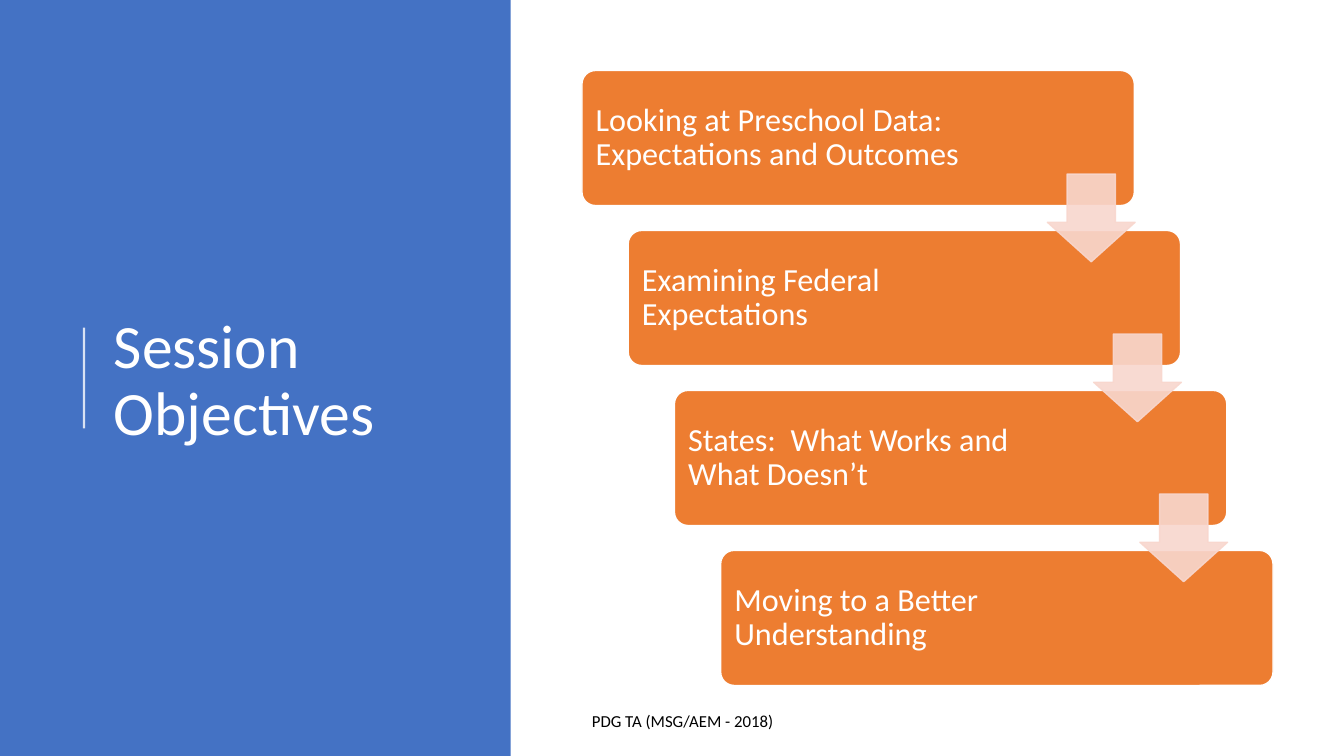
from lxml import etree
from pptx import Presentation, util as u
from pptx.dml.color import RGBColor
from pptx.enum import shapes, text
from pptx.oxml import ns

WIDTH, HEIGHT = u.Inches(13.333), u.Inches(7.5)
COLUMN, ROW = WIDTH / 100, HEIGHT / 100

BLUE = RGBColor(0x44, 0x72, 0xC4)
ORANGE = RGBColor(0xED, 0x7D, 0x31)
PEACH = RGBColor(0xF8, 0xD7, 0xCE)
WHITE = RGBColor(0xFF, 0xFF, 0xFF)
BLACK = RGBColor(0, 0, 0)

OBJECTIVES = [
    "Looking at Preschool Data: Expectations and Outcomes",
    "Examining Federal Expectations",
    "States:  What Works and What Doesn’t",
    "Moving to a Better Understanding",
]
STEP_COLUMNS, STEP_ROWS = 3.44, 21.16


def place(left, top, width, height):
    return [round(length) for length in
            (left * COLUMN, top * ROW, width * COLUMN, height * ROW)]


def set_opacity(fill_parent, percent):
    for color in fill_parent.iter(ns.qn("a:srgbClr")):
        etree.SubElement(color, ns.qn("a:alpha"), val=str(percent * 1000))


def add_block(slide, kind, area, fill, line=None, adjustments=(), opacity=100):
    shape = slide.shapes.add_shape(kind, *place(*area))
    shape.shadow.inherit = False
    shape.fill.solid()
    shape.fill.fore_color.rgb = fill
    if line is None:
        shape.line.fill.background()
    else:
        shape.line.color.rgb = line
        shape.line.width = u.Pt(1)
    for index, value in enumerate(adjustments):
        shape.adjustments[index] = value
    if opacity < 100:
        set_opacity(shape._element.spPr, opacity)


def add_text(slide, area, wording, size, color, line_spacing=1.0, inset=0.05):
    box = slide.shapes.add_textbox(*place(*area))
    frame = box.text_frame
    frame.word_wrap = True
    frame.vertical_anchor = text.MSO_ANCHOR.MIDDLE
    frame.margin_left = frame.margin_right = u.Inches(0.1)
    frame.margin_top = frame.margin_bottom = u.Inches(inset)
    paragraph = frame.paragraphs[0]
    paragraph.text = wording
    paragraph.line_spacing = line_spacing
    paragraph.font.name = "Calibri"
    paragraph.font.size = u.Pt(size)
    paragraph.font.color.rgb = color


def add_accent_line(slide, left, top, bottom):
    x = round(left * COLUMN)
    line = slide.shapes.add_connector(
        shapes.MSO_CONNECTOR.STRAIGHT, x, round(bottom * ROW), x, round(top * ROW))
    line.line.color.rgb = WHITE
    line.line.width = u.Pt(1.5)
    set_opacity(line._element.spPr, 80)
    etree.SubElement(line._element.spPr, ns.qn("a:effectLst"))


def add_staircase(slide):
    steps = [(index * STEP_COLUMNS, index * STEP_ROWS, objective)
             for index, objective in enumerate(OBJECTIVES)]
    for right, down, objective in steps:
        add_block(slide, shapes.MSO_SHAPE.ROUNDED_RECTANGLE,
                  (43.3 + right, 9.33 + down, 41.1, 17.87),
                  ORANGE, WHITE, [0.1])
        add_text(slide, (43.58 + right, 9.87 + down, 30.6, 16.8),
                 objective, 23, WHITE, 0.9, 0.1)
    for right, down, _ in steps[:-1]:
        add_block(slide, shapes.MSO_SHAPE.DOWN_ARROW,
                  (77.93 + right, 23.03 + down, 6.53, 11.6),
                  PEACH, PEACH, [0.45, 0.55][::-1], 90)


def main():
    presentation = Presentation()
    presentation.slide_width, presentation.slide_height = WIDTH, HEIGHT
    slide = presentation.slides.add_slide(presentation.slide_layouts[6])
    add_block(slide, shapes.MSO_SHAPE.RECTANGLE, (0, 0, 38, 100), BLUE)
    add_accent_line(slide, 6.25, 43.33, 56.67)
    add_text(slide, (7.73, 10.4, 27.7, 80.27), "Session Objectives", 44, WHITE, 0.9)
    add_staircase(slide)
    add_text(slide, (43.3, 92.67, 23.55, 5.33), "PDG TA (MSG/AEM - 2018)", 12, BLACK)
    presentation.save("out.pptx")


if __name__ == "__main__":
    main()
